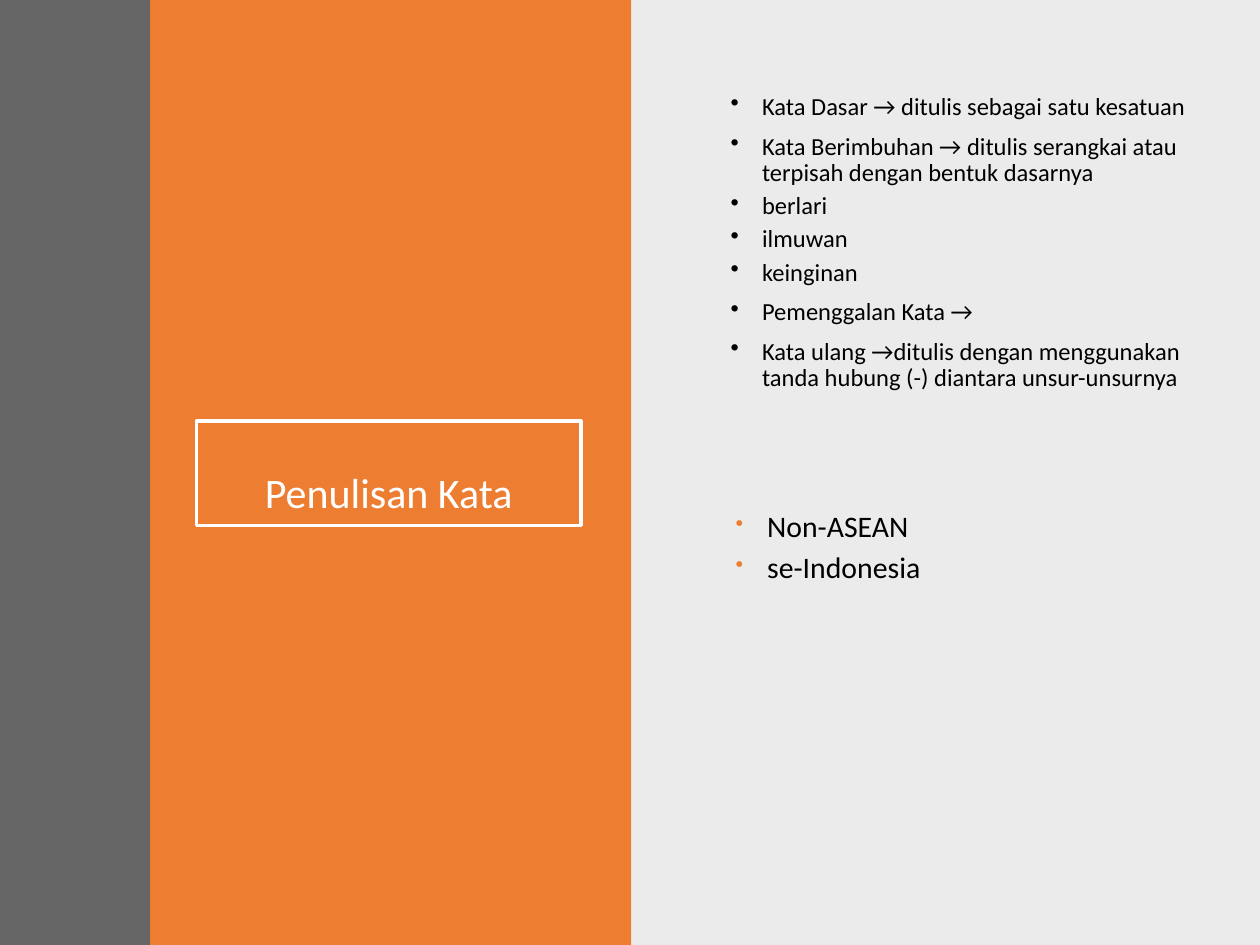
from lxml import etree
from pptx import Presentation
from pptx.dml.color import RGBColor
from pptx.enum import shapes, text
from pptx.oxml import ns
from pptx.util import Inches, Pt

FONT = "Calibri"
ACCENT = "ED7D31"
BLACK, WHITE, GREY = "000000", "FFFFFF", "404040"
SLIDE_WIDTH, SLIDE_HEIGHT = 10, 7.5

RULES = [  # level, wording
    (0, "Kata Dasar → ditulis sebagai satu kesatuan"),
    (0, "Kata Berimbuhan → ditulis serangkai atau terpisah dengan bentuk dasarnya"),
    (1, "berlari"),
    (1, "ilmuwan"),
    (1, "keinginan"),
    (0, "Pemenggalan Kata →"),
    (0, "Kata ulang →ditulis dengan menggunakan tanda hubung (-) diantara unsur-unsurnya"),
]
EXAMPLES = [(1, "Non-ASEAN"), (1, "se-Indonesia")]


def rgb(color):
    return RGBColor.from_string(color)


def add_element(parent, tag, **attributes):
    return etree.SubElement(parent, ns.qn(tag), attributes)


def write(paragraph, wording, size, color):
    run = paragraph.add_run()
    run.text = wording
    font_format = {"name": FONT, "size": Pt(size)}
    for key, value in font_format.items():
        setattr(run.font, key, value)
    run.font.color.rgb = rgb(color)
    paragraph.line_spacing = 0.9


def add_panel(slide, left, width, color, opacity=100):
    """Add a full-height band; opacity is in percent."""
    panel = slide.shapes.add_shape(
        shapes.MSO_SHAPE.RECTANGLE,
        Inches(left), Inches(0), Inches(width), Inches(SLIDE_HEIGHT))
    panel.shadow.inherit = False
    panel.line.fill.background()
    panel.fill.solid()
    panel.fill.fore_color.rgb = rgb(color)
    if opacity < 100:
        color_node = panel.fill._xPr.find(ns.qn("a:solidFill"))[0]
        add_element(color_node, "a:alpha", val=str(opacity * 1000))


def add_title(slide, wording):
    title = slide.shapes.add_textbox(
        Inches(1.56), Inches(3.34), Inches(3.05), Inches(0.83))
    title.line.color.rgb = rgb(WHITE)
    title.line.width = Pt(2)
    frame_format = {
        "word_wrap": True,
        "vertical_anchor": text.MSO_ANCHOR.MIDDLE,
        "margin_top": Inches(0.4),
    }
    for key, value in frame_format.items():
        setattr(title.text_frame, key, value)
    heading = title.text_frame.paragraphs[0]
    heading.alignment = text.PP_ALIGN.CENTER
    write(heading, wording, 24, WHITE)


def add_bullets(slide, top, items, size, indent, spacing, bullet_color=BLACK, bullet_size=100):
    """Add a bulleted list; spacing gives the points before each level."""
    box = slide.shapes.add_textbox(
        Inches(5.39), Inches(top), Inches(4.14), Inches(2.79))
    frame = box.text_frame
    frame.word_wrap = True
    for number, (level, wording) in enumerate(items):
        paragraph = frame.add_paragraph() if number else frame.paragraphs[0]
        paragraph.level = level
        paragraph.space_before = Pt(spacing[level])
        write(paragraph, wording, size, BLACK)
        properties = paragraph._p.get_or_add_pPr()
        properties.set("marL", str(Inches(indent)))
        properties.set("indent", str(Inches(-0.25)))
        add_element(add_element(properties, "a:buClr"), "a:srgbClr", val=bullet_color)
        add_element(properties, "a:buSzPct", val=str(bullet_size * 1000))
        add_element(properties, "a:buChar", char="•")


def main():
    deck = Presentation()
    deck.slide_width = Inches(SLIDE_WIDTH)
    deck.slide_height = Inches(SLIDE_HEIGHT)
    slide = deck.slides.add_slide(deck.slide_layouts[6])
    add_panel(slide, 5, 5, BLACK, opacity=8)
    add_panel(slide, 1.19, 3.82, ACCENT)
    add_title(slide, "Penulisan Kata")
    add_panel(slide, 0, 1.19, GREY, opacity=80)
    add_bullets(slide, 0.7, RULES, 14, 0.56, spacing=(7.5, 3.8))
    add_bullets(slide, 4.01, EXAMPLES, 17, 0.6, spacing=(5, 5),
                bullet_color=ACCENT, bullet_size=76)
    deck.save("out.pptx")


if __name__ == "__main__":
    main()
